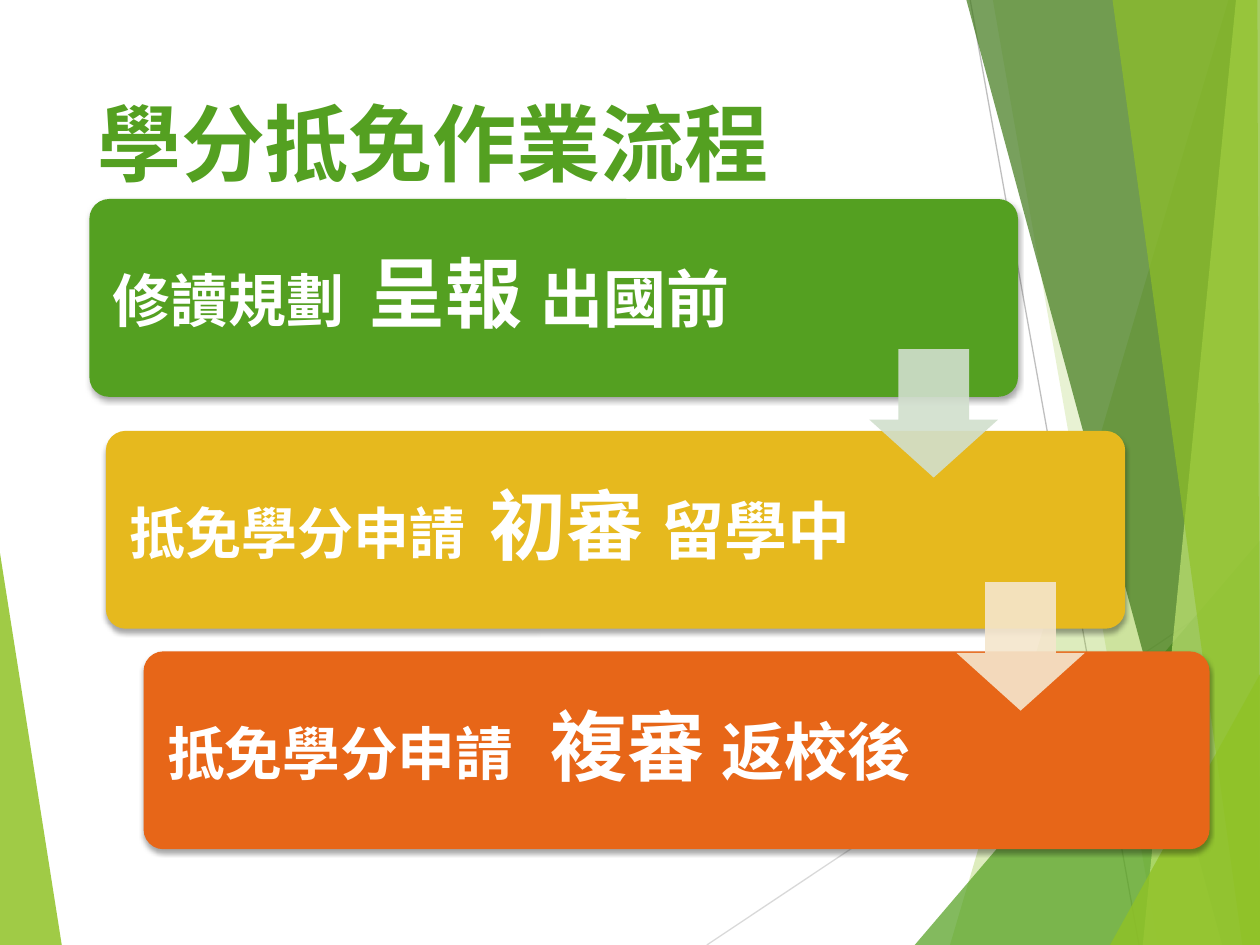
from lxml import etree
from pptx import Presentation
from pptx.dml.color import RGBColor
from pptx.enum.shapes import MSO_CONNECTOR, MSO_SHAPE
from pptx.enum.text import MSO_ANCHOR, PP_ALIGN
from pptx.oxml.ns import qn
from pptx.util import Inches, Pt

STRAIGHT = MSO_CONNECTOR.STRAIGHT
ROUNDED, DOWN_ARROW = MSO_SHAPE.ROUNDED_RECTANGLE, MSO_SHAPE.DOWN_ARROW
MIDDLE, LEFT = MSO_ANCHOR.MIDDLE, PP_ALIGN.LEFT

LIME = RGBColor(0x90, 0xC2, 0x26)
PALE_LIME = RGBColor(0xC0, 0xE4, 0x74)
GREEN = RGBColor(0x54, 0xA0, 0x21)
DARK_GREEN = RGBColor(0x3F, 0x78, 0x19)
YELLOW = RGBColor(0xE6, 0xB9, 0x1E)
ORANGE = RGBColor(0xE7, 0x66, 0x18)
MIST = RGBColor(0xD1, 0xDF, 0xCD)
CREAM = RGBColor(0xF5, 0xE6, 0xCD)
LIGHT_GREY = RGBColor(0xD9, 0xD9, 0xD9)
GREY = RGBColor(0xBF, 0xBF, 0xBF)
WHITE = RGBColor(0xFF, 0xFF, 0xFF)
BLACK = RGBColor(0, 0, 0)
FONT = "Karla"


def paint(shape, color, opacity=100):
    """Give a plain fill with no outline and no shadow; opacity in percent."""
    shape.shadow.inherit = False
    shape.line.fill.background()
    shape.fill.solid()
    shape.fill.fore_color.rgb = color
    if opacity < 100:
        tint = shape.fill._xPr.find(".//" + qn("a:srgbClr"))
        etree.SubElement(tint, qn("a:alpha"), val=str(opacity * 1000))


def add_run(paragraph, text, size, color):
    run = paragraph.add_run()
    run.text = text
    run.font.name = FONT
    run.font.size = Pt(size)
    run.font.bold = True
    run.font.color.rgb = color


prs = Presentation()
prs.slide_width, prs.slide_height = Inches(10), Inches(7.5)
slide = prs.slides.add_slide(prs.slide_layouts[5])
shapes = slide.shapes

# Title
title = shapes.title
title.left, title.top = Inches(0.67), Inches(0.67)
title.width, title.height = Inches(6.94), Inches(0.92)
title.text_frame.vertical_anchor = MIDDLE
heading = title.text_frame.paragraphs[0]
heading.alignment = LEFT
add_run(heading, "學分抵免作業流程", 48, GREEN)

# Backdrop: two hairlines among translucent facets, back to front
facets = [
    ([(0, 4.39), (0.49, 7.5), (0, 7.5)], LIME, 85),
    ([(9.75, 0), (7.54, 7.5), (10, 7.5), (10, 0)], LIME, 30),
    ([(7.88, 0), (9.19, 7.5), (10, 7.5), (10, 0)], LIME, 20),
    ([(7.26, 7.5), (10, 4.29), (10, 7.5)], GREEN, 72),
    ([(7.67, 0), (9.7, 7.5), (10, 7.5), (10, 0)], DARK_GREEN, 70),
    ([(9.81, 0), (9.07, 7.5), (10, 7.5), (10, 0)], PALE_LIME, 70),
    ([(8.83, 0), (9.86, 7.5), (10, 7.5), (9.98, 0)], LIME, 65),
    ([(8.81, 7.5), (10, 5.35), (10, 7.5)], LIME, 80),
]
hairlines = [
    (5.61, 7.5, 10, 4.57, LIGHT_GREY),
    (7.7, 0, 9.04, 7.5, GREY),
]
for *ends, color in hairlines:
    hairline = shapes.add_connector(STRAIGHT, *[Inches(v) for v in ends])
    hairline.line.color.rgb = color
    hairline.line.width = Pt(0.75)
    etree.SubElement(hairline._element.spPr, qn("a:effectLst"))
for corners, color, opacity in facets:
    start, *others = [(Inches(x), Inches(y)) for x, y in corners]
    outline = shapes.build_freeform(*start)
    outline.add_line_segments(others, close=True)
    paint(outline.convert_to_shape(), color, opacity)

# Steps: left, top, width, colour, task, task size, tab stop, action, period
steps = [
    (0.71, 1.58, 7.37, GREEN, "修讀規劃", 33, 2.03, "呈報", "出國前"),
    (0.84, 3.42, 8.09, YELLOW, "抵免學分申請", 32, 2.86, "初審", "留學中"),
    (1.14, 5.17, 8.46, ORANGE, "抵免學分申請", 33, 3.04, "複審", "返校後"),
]
for left, top, width, color, task, task_size, stop, action, period in steps:
    card = shapes.add_shape(ROUNDED, Inches(left), Inches(top), Inches(width), Inches(1.57))
    card.adjustments[0] = 0.1
    paint(card, color)
    effects = card._element.spPr.find(qn("a:effectLst"))
    shadow = etree.SubElement(effects, qn("a:outerShdw"), blurRad=str(Pt(3)), dist=str(Pt(2)),
                              dir=str(90 * 60000), rotWithShape="0")
    shade = etree.SubElement(shadow, qn("a:srgbClr"), val=str(BLACK))
    etree.SubElement(shade, qn("a:alpha"), val="35000")

    frame = card.text_frame
    frame.word_wrap = True
    frame.vertical_anchor = MIDDLE
    frame.margin_left = frame.margin_right = Inches(0.14)
    frame.margin_top = frame.margin_bottom = Inches(0.14)
    line = frame.paragraphs[0]
    line.alignment = LEFT
    line.line_spacing = 0.9
    tabs = etree.SubElement(line._p.get_or_add_pPr(), qn("a:tabLst"))
    etree.SubElement(tabs, qn("a:tab"), pos=str(Inches(stop)), algn="l")
    add_run(line, task + "\t", task_size, WHITE)
    add_run(line, action + " ", 44, WHITE)
    add_run(line, period, 36, WHITE)

# Arrows from each step to the next
for left, top, color in [(6.9, 2.77, MIST), (7.59, 4.62, CREAM)]:
    arrow = shapes.add_shape(DOWN_ARROW, Inches(left), Inches(top), Inches(1.02), Inches(1.02))
    arrow.adjustments[0] = 0.55
    arrow.adjustments[1] = 0.45
    paint(arrow, color, 90)

prs.save("out.pptx")
